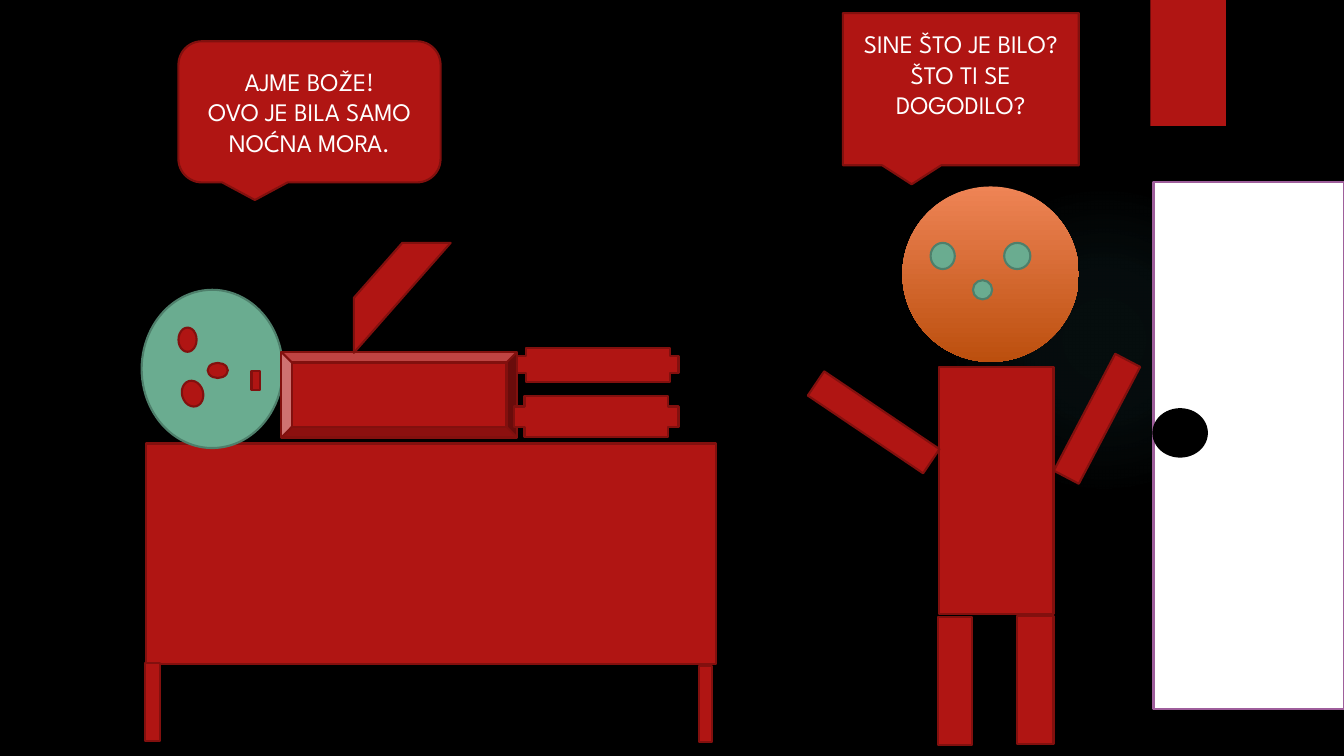
from lxml.etree import SubElement
from pptx import Presentation
from pptx.dml.color import RGBColor
from pptx.enum.shapes import MSO_SHAPE
from pptx.enum.text import MSO_ANCHOR, PP_ALIGN
from pptx.oxml.ns import qn
from pptx.util import Inches, Pt

COLORS = {
    "night": "000000", "red": "B01513", "dark red": "82100E",
    "green": "6AAC90", "dark green": "4E7F6B", "white": "FFFFFF",
    "purple": "9E5E9B", "peach": "EE8455", "rust": "BC4F0E", "teal": "50B9C1",
}
FONT = "League Spartan"
OUTLINES = {"red": "dark red", "green": "dark green", "white": "purple", "night": "night"}

# Each part: preset, (left, top, width, height), colour, rotation
SLEEPER = [
    (MSO_SHAPE.RECTANGLE, (1.45, 4.4, 5.65, 2.19), "red", 0),        # bed
    (MSO_SHAPE.MATH_MINUS, (0.98, 6.65, 1.06, 0.63), "red", 90),     # bed legs
    (MSO_SHAPE.MATH_MINUS, (6.48, 6.72, 1.03, 0.53), "red", 90),
    (MSO_SHAPE.OVAL, (1.32, 2.96, 1.57, 1.4), "green", 270),         # head
    (MSO_SHAPE.FLOWCHART_CONNECTOR, (1.74, 3.28, 0.24, 0.18), "red", 270),
    (MSO_SHAPE.FLOWCHART_CONNECTOR, (1.78, 3.8, 0.26, 0.21), "red", 254.2),
    (MSO_SHAPE.FLOWCHART_CONNECTOR, (2.06, 3.6, 0.2, 0.15), "red", 0),
    (MSO_SHAPE.MATH_MINUS, (2.48, 3.39, 0.11, 0.77), "red", 0),      # mouth
    (MSO_SHAPE.BEVEL, (2.79, 3.49, 2.34, 0.85), "red", 0),           # body
    (MSO_SHAPE.DIAGONAL_STRIPE, (3.51, 2.41, 0.96, 1.09), "red", 0),  # arm
    (MSO_SHAPE.CROSS, (5.13, 3.45, 1.6, 0.34), "red", 0),            # legs
    (MSO_SHAPE.CROSS, (5.1, 3.93, 1.63, 0.41), "red", 0),
]
DOOR = [
    (MSO_SHAPE.RECTANGLE, (11.44, 1.81, 1.89, 5.22), "white", 0),
    (MSO_SHAPE.FLOWCHART_CONNECTOR, (11.44, 4.06, 0.53, 0.47), "night", 0),
]
PARENT_HEAD = (8.95, 1.85, 1.75, 1.74)
PARENT = [
    (MSO_SHAPE.FLOWCHART_CONNECTOR, (9.23, 2.41, 0.24, 0.26), "green", 0),
    (MSO_SHAPE.FLOWCHART_CONNECTOR, (9.96, 2.41, 0.26, 0.26), "green", 0),
    (MSO_SHAPE.FLOWCHART_CONNECTOR, (9.65, 2.78, 0.19, 0.19), "green", 0),
    (MSO_SHAPE.RECTANGLE, (9.31, 3.64, 1.14, 2.45), "red", 0),       # body
    (MSO_SHAPE.RECTANGLE, (9.3, 6.12, 0.34, 1.27), "red", 0),        # legs
    (MSO_SHAPE.RECTANGLE, (10.09, 6.11, 0.36, 1.27), "red", 0),
    (MSO_SHAPE.RECTANGLE, (8.52, 3.5, 0.29, 1.38), "red", 304),      # arms
    (MSO_SHAPE.RECTANGLE, (10.74, 3.5, 0.28, 1.31), "red", 27.7),
]
# Each speech: part, lines, bottom inset
SLEEPER_SPEECH = (
    (MSO_SHAPE.ROUNDED_RECTANGULAR_CALLOUT, (1.77, 0.41, 2.6, 1.4), "red", 0),
    ["AJME BOŽE!", "OVO JE BILA SAMO NOĆNA MORA."], 0.05)
PARENT_SPEECH = (
    (MSO_SHAPE.RECTANGULAR_CALLOUT, (8.36, 0.13, 2.34, 1.51), "red", 0),
    ["SINE ŠTO JE BILO?", "ŠTO TI SE DOGODILO?"], 0.35)
GLOW = (9.41, 1.83, 3.08, 3.08)
GLOW_STOPS = [(0, 7), (36, 6), (69, 0)]  # position and opacity, percent
RIBBON = (11.41, 0, 0.75, 1.25)


def rgb(name):
    return RGBColor.from_string(COLORS[name])


def add_plain(shapes, preset, box):
    """Add a preset without shadow or outline."""
    shape = shapes.add_shape(preset, *map(Inches, box))
    shape.shadow.inherit = False
    shape.line.fill.background()
    return shape


def add_part(shapes, preset, box, color, rotation):
    shape = add_plain(shapes, preset, box)
    shape.rotation = rotation
    shape.fill.solid()
    shape.fill.fore_color.rgb = rgb(color)
    shape.line.color.rgb = rgb(OUTLINES[color])
    shape.line.width = Pt(1.5)
    return shape


def add_speech(shapes, part, lines, bottom):
    frame = add_part(shapes, *part).text_frame
    frame.word_wrap = True
    frame.vertical_anchor = MSO_ANCHOR.MIDDLE
    frame.margin_bottom = Inches(bottom)
    frame.text = "\n".join(lines)
    for paragraph in frame.paragraphs:
        paragraph.alignment = PP_ALIGN.CENTER
        paragraph.font.name = FONT
        paragraph.font.size = Pt(18)
        paragraph.font.color.rgb = rgb("white")


def add_glow(shapes):
    """Add a circle that fades out from its centre."""
    glow = add_plain(shapes, MSO_SHAPE.OVAL, GLOW)
    glow.fill.gradient()
    gradient = glow._element.spPr.find(qn("a:gradFill"))
    for child in list(gradient):
        gradient.remove(child)
    stops = SubElement(gradient, qn("a:gsLst"))
    for position, opacity in GLOW_STOPS:
        stop = SubElement(stops, qn("a:gs"), pos=str(position * 1000))
        color = SubElement(stop, qn("a:srgbClr"), val=COLORS["teal"])
        SubElement(color, qn("a:alpha"), val=str(opacity * 1000))
    path = SubElement(gradient, qn("a:path"), path="circle")
    SubElement(path, qn("a:fillToRect"), {side: "50000" for side in "ltrb"})


def add_parent_head(shapes):
    fill = add_plain(shapes, MSO_SHAPE.OVAL, PARENT_HEAD).fill
    fill.gradient()
    fill.gradient_angle = 270
    for stop, color, position in zip(fill.gradient_stops, ("peach", "rust"), (0, 1)):
        stop.color.rgb = rgb(color)
        stop.position = position


def main():
    deck = Presentation()
    deck.slide_width, deck.slide_height = Inches(13.33), Inches(7.5)
    slide = deck.slides.add_slide(deck.slide_layouts[6])
    slide.background.fill.solid()
    slide.background.fill.fore_color.rgb = rgb("night")
    shapes = slide.shapes

    add_glow(shapes)
    ribbon = add_plain(shapes, MSO_SHAPE.RECTANGLE, RIBBON)
    ribbon.fill.solid()
    ribbon.fill.fore_color.rgb = rgb("red")

    sleeper = shapes.add_group_shape().shapes
    for part in SLEEPER:
        add_part(sleeper, *part)
    add_speech(shapes, *SLEEPER_SPEECH)
    for part in DOOR:
        add_part(shapes, *part)
    parent = shapes.add_group_shape().shapes
    add_parent_head(parent)
    for part in PARENT:
        add_part(parent, *part)
    add_speech(shapes, *PARENT_SPEECH)

    deck.save("out.pptx")


if __name__ == "__main__":
    main()
